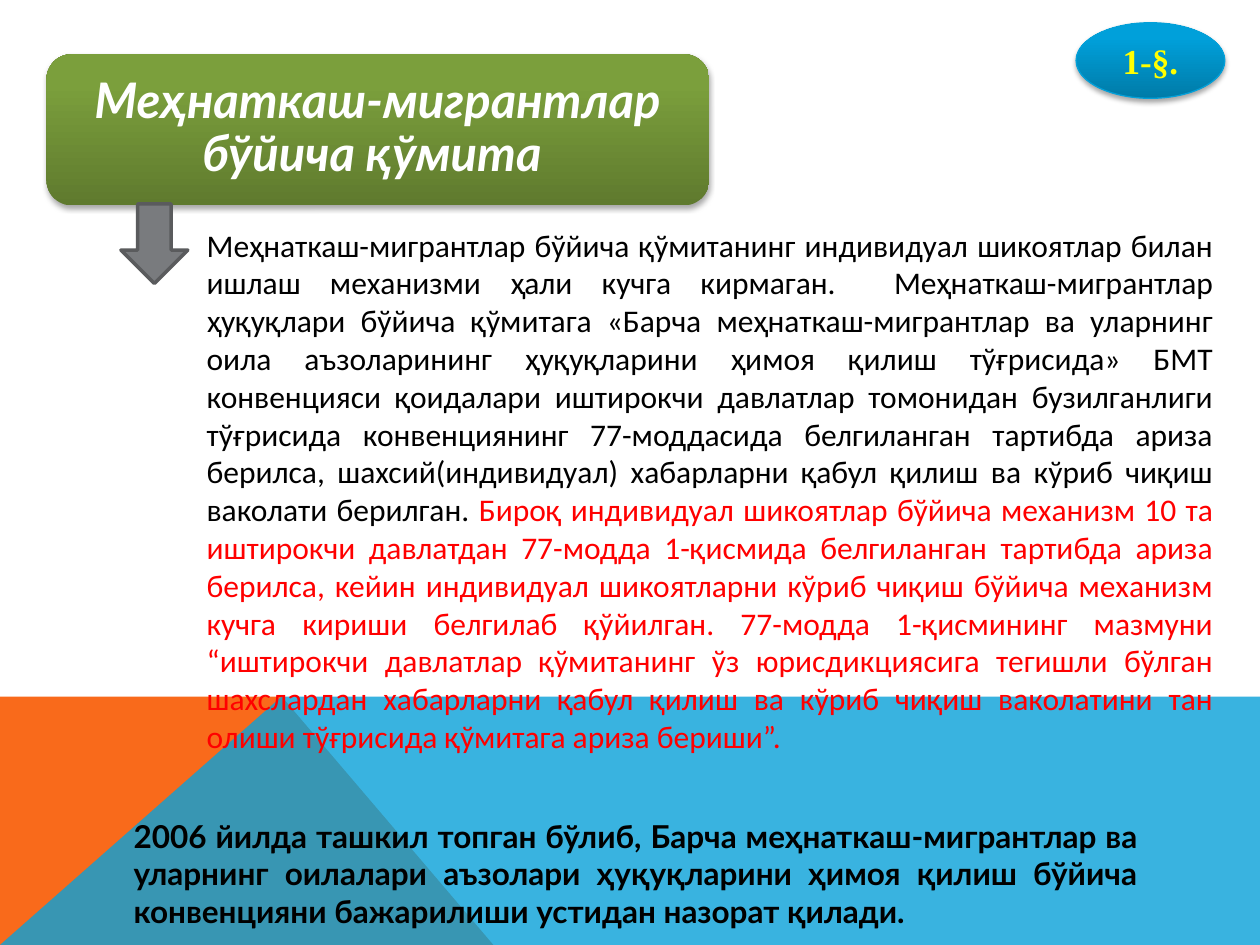
"""Build the slide on the committee for migrant workers."""
import pptx
import pptx.dml.color
import pptx.enum.shapes
import pptx.enum.text
import pptx.oxml
import pptx.oxml.ns
import pptx.util

Pt = pptx.util.Pt
Kind = pptx.enum.shapes.MSO_SHAPE
Align = pptx.enum.text.PP_ALIGN
Anchor = pptx.enum.text.MSO_ANCHOR

THEME = {
    "color": {
        "orange": "F96A1B", "sky": "08A1D9", "white": "FFFFFF",
        "black": "000000", "red": "FF0000", "yellow": "FFFF00",
        "gray": "797B7E", "edge": "5A5B5D", "rim": "03A0D9",
        "green": ("5F7A2E", "7B9F3C"), "blue": ("007BA8", "00A0DA"),
    },
    "font": {
        "title": {"name": "Lato", "size": Pt(28), "bold": True, "italic": True},
        "body": {"name": "Calibri", "size": Pt(18), "bold": False},
        "note": {"name": "Lato", "size": Pt(18), "bold": True},
        "badge": {"name": "Times New Roman", "size": Pt(20), "bold": True},
    },
}

WIDE, HIGH = 720, 540
TOP, PEAK = 397.5, 160.6

BANDS = [
    ("orange", 100, [(0, HIGH), (0, TOP), (PEAK, TOP), (281.5, HIGH)]),
    ("sky", 80, [(0, HIGH), (PEAK, TOP), (WIDE, TOP), (WIDE, HIGH)]),
]

SHAPES = {
    "badge": (Kind.OVAL, (614.9, 13, 85, 43.2), "blue", "rim", 0.75),
    "panel": (Kind.ROUNDED_RECTANGLE, (26.6, 31, 378.7, 86.4), "green", None, 0),
    "arrow": (Kind.DOWN_ARROW, (69.1, 116.6, 38.2, 45.4), "gray", "edge", 2),
}

BADGE = [("1-§.", "yellow")]

TEXTS = [
    ("title", (37.4, 46.1, 356.4, 55.4), Align.CENTER, Anchor.MIDDLE, 10.8, 0.9, [
        ("Меҳнаткаш-мигрантлар бўйича қўмита ", "white"),
    ]),
    ("body", (110.9, 125.3, 589.7, 312.5), Align.JUSTIFY, Anchor.TOP, 7.2, 1.0, [
        ("Меҳнаткаш-мигрантлар бўйича қўмитанинг индивидуал шикоятлар билан "
         "ишлаш механизми ҳали кучга кирмаган.  Меҳнаткаш-мигрантлар ҳуқуқлари "
         "бўйича қўмитага «Барча меҳнаткаш-мигрантлар ва уларнинг оила "
         "аъзоларининг ҳуқуқларини ҳимоя қилиш тўғрисида» БМТ конвенцияси "
         "қоидалари иштирокчи давлатлар томонидан бузилганлиги тўғрисида "
         "конвенциянинг 77-моддасида белгиланган тартибда ариза берилса, "
         "шахсий(индивидуал) хабарларни қабул қилиш ва кўриб чиқиш ваколати "
         "берилган. ", "black"),
        ("Бироқ индивидуал шикоятлар бўйича механизм 10 та иштирокчи давлатдан "
         "77-модда 1-қисмида белгиланган тартибда ариза берилса, кейин "
         "индивидуал шикоятларни кўриб чиқиш бўйича механизм кучга кириши "
         "белгилаб қўйилган. 77-модда 1-қисмининг мазмуни “иштирокчи давлатлар "
         "қўмитанинг ўз юрисдикциясига тегишли бўлган шахслардан хабарларни "
         "қабул қилиш ва кўриб чиқиш ваколатини тан олиши тўғрисида қўмитага "
         "ариза бериши”.", "red"),
    ]),
    ("note", (69.1, 463, 588.2, 72.7), Align.JUSTIFY, Anchor.TOP, 7.2, 1.0, [
        ("2006 йилда ташкил топган бўлиб, Барча меҳнаткаш-мигрантлар ва "
         "уларнинг оилалари аъзолари ҳуқуқларини ҳимоя қилиш бўйича "
         "конвенцияни бажарилиши устидан назорат қилади. ", "black"),
    ]),
]

SHADE = (
    f'<a:effectLst {pptx.oxml.ns.nsdecls("a")}>'
    f'<a:outerShdw blurRad="{Pt(3.1)}" dist="{Pt(1.8)}" dir="5400000" rotWithShape="0">'
    '<a:srgbClr val="000000"><a:alpha val="35000"/></a:srgbClr>'
    '</a:outerShdw></a:effectLst>'
)


def put(item, vals):
    for key, val in vals.items():
        setattr(item, key, val)


def hue(code):
    return pptx.dml.color.RGBColor.from_string(code)


def tint(fill, name):
    code = THEME["color"][name]
    if isinstance(code, str):
        fill.solid()
        fill.fore_color.rgb = hue(code)
        return
    fill.gradient()
    fill.gradient_angle = 90
    for stop, tone, spot in zip(fill.gradient_stops, code, (0, 0.8)):
        stop.color.rgb = hue(tone)
        stop.position = spot


def write(shape, style, runs, align, anchor, inset=7.2, lead=1.0):
    frame = shape.text_frame
    put(frame, {
        "word_wrap": True, "auto_size": pptx.enum.text.MSO_AUTO_SIZE.NONE,
        "vertical_anchor": anchor,
        "margin_left": Pt(inset), "margin_right": Pt(inset),
        "margin_top": Pt(3.6), "margin_bottom": Pt(3.6),
    })
    para = frame.paragraphs[0]
    put(para, {"alignment": align, "line_spacing": lead,
               "space_before": Pt(0), "space_after": Pt(0)})
    for text, color in runs:
        run = para.add_run()
        run.text = text
        put(run.font, THEME["font"][style])
        run.font.color.rgb = hue(THEME["color"][color])
    return para


def plain(para):
    props = para._p.get_or_add_pPr()
    props.set("marL", "0")
    props.set("indent", "0")
    props.append(pptx.oxml.parse_xml(f'<a:buNone {pptx.oxml.ns.nsdecls("a")}/>'))


def band(slide, color, alpha, spots):
    build = slide.shapes.build_freeform(*spots[0], scale=Pt(1))
    build.add_line_segments(spots[1:], close=True)
    shape = build.convert_to_shape()
    shape.shadow.inherit = False
    tint(shape.fill, color)
    shape.line.fill.background()
    if alpha < 100:
        tone = shape.element.xpath("./p:spPr/a:solidFill/a:srgbClr")[0]
        tone.append(pptx.oxml.parse_xml(
            f'<a:alpha {pptx.oxml.ns.nsdecls("a")} val="{alpha * 1000}"/>'))


def draw(slide, kind, box, fill, edge, width):
    shape = slide.shapes.add_shape(kind, *map(Pt, box))
    tint(shape.fill, fill)
    if edge:
        tint(shape.line.fill, edge)
        shape.line.width = Pt(width)
    else:
        shape.line.fill.background()
    shape.shadow.inherit = False
    if fill in ("blue", "green"):
        props = shape.element.spPr
        props.replace(props.find(pptx.oxml.ns.qn("a:effectLst")),
                      pptx.oxml.parse_xml(SHADE))
    return shape


def main():
    deck = pptx.Presentation()
    put(deck, {"slide_width": Pt(WIDE), "slide_height": Pt(HIGH)})
    slide = deck.slides.add_slide(deck.slide_layouts[3])
    slots = list(slide.placeholders)
    for item in BANDS:
        band(slide, *item)
    made = {name: draw(slide, *item) for name, item in SHAPES.items()}
    write(made["badge"], "badge", BADGE, Align.CENTER, Anchor.MIDDLE)
    for slot, (style, box, align, anchor, inset, lead, runs) in zip(slots, TEXTS):
        put(slot, dict(zip(("left", "top", "width", "height"), map(Pt, box))))
        para = write(slot, style, runs, align, anchor, inset, lead)
        if style != "title":
            plain(para)
        slide.shapes.element.append(slot.element)
    deck.save("out.pptx")


if __name__ == "__main__":
    main()
